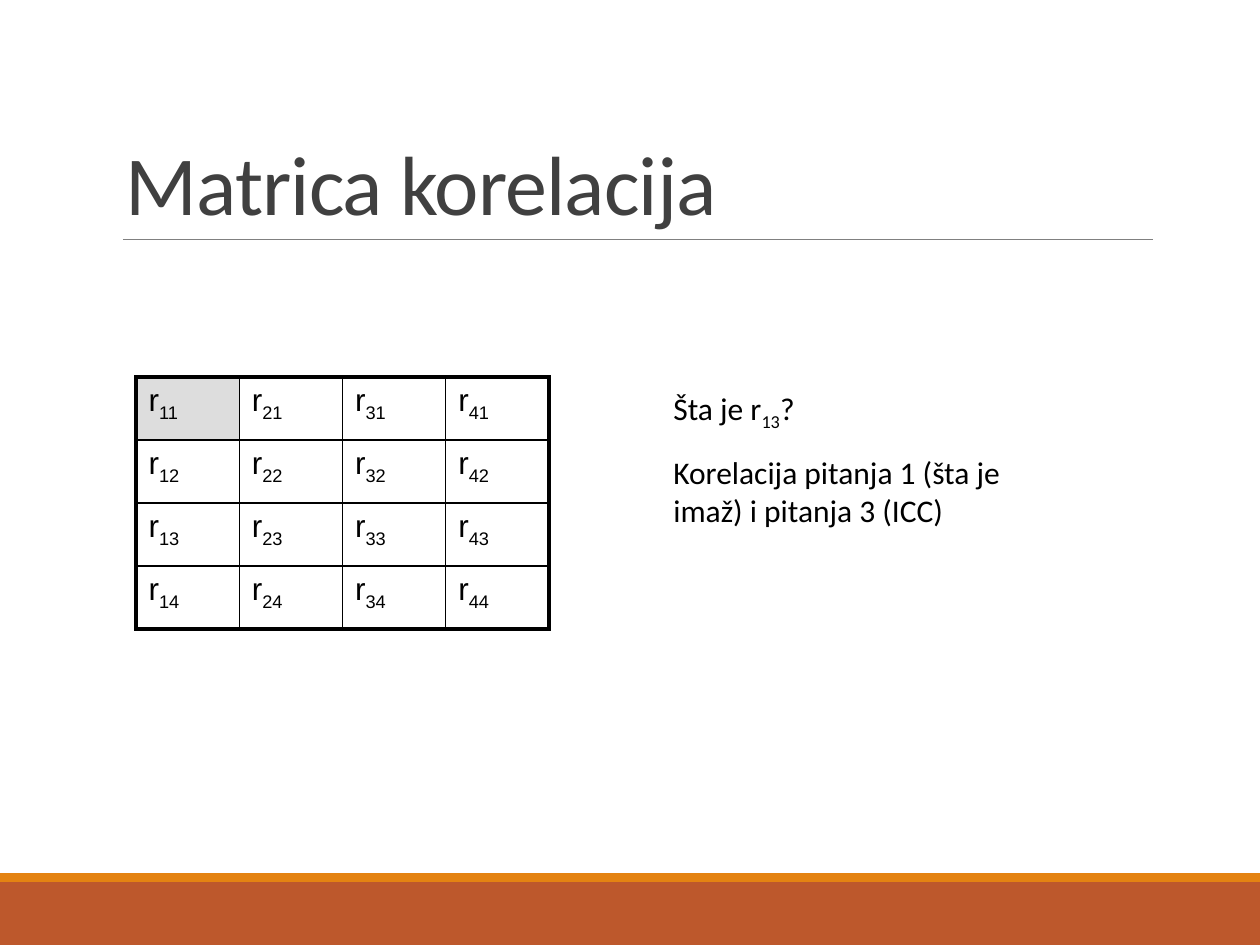
from lxml.etree import SubElement
from pptx import Presentation
from pptx.dml.color import RGBColor
from pptx.enum.shapes import MSO_CONNECTOR as CONNECTOR, MSO_SHAPE as SHAPE
from pptx.enum.text import MSO_ANCHOR as ANCHOR, MSO_AUTO_SIZE as AUTO_SIZE, PP_ALIGN as ALIGN
from pptx.oxml import parse_xml
from pptx.oxml.ns import nsdecls, qn
from pptx.util import Emu, Pt

PX = 914400 / 126
WIDTH, HEIGHT = 1260, 945

BLACK = RGBColor(0x00, 0x00, 0x00)
CHARCOAL = RGBColor(0x40, 0x40, 0x40)
GREY = RGBColor(0x80, 0x80, 0x80)
LIGHT_GREY = RGBColor(0xDD, 0xDD, 0xDD)
WHITE = RGBColor(0xFF, 0xFF, 0xFF)
RUST = RGBColor(0xBD, 0x58, 0x2C)
ORANGE = RGBColor(0xE4, 0x83, 0x12)

SIZE = 4
THIN, THICK = 1, 2.25


def px(*lengths):
    return [Emu(round(length * PX)) for length in lengths]


def add_subscripted(paragraph, pieces, font_name):
    """Write the pieces in turn as normal and subscript text."""
    for index, piece in enumerate(pieces):
        run = paragraph.add_run()
        run.text = piece
        if index % 2:
            run.font._element.set("baseline", "-25000")
    paragraph.font.name = font_name
    paragraph.font.size = Pt(18)
    paragraph.font.color.rgb = BLACK


def add_footer_bands(slide, left, top, width, height):
    stripe = 9
    for band_top, band_height, colour in ((top + stripe, height - stripe, RUST),
                                          (top, stripe, ORANGE)):
        band = slide.shapes.add_shape(SHAPE.RECTANGLE, *px(left, band_top, width, band_height))
        band.shadow.inherit = False
        band.fill.solid()
        band.fill.fore_color.rgb = colour
        band.line.fill.background()


def add_title(slide, left, top, width, height):
    """Fill the title placeholder and rule a line along its bottom edge."""
    bottom, right = top + height, left + width
    rule = slide.shapes.add_connector(CONNECTOR.STRAIGHT, *px(left + 10, bottom, right, bottom))
    rule.line.color.rgb = GREY
    rule.line.width = Pt(0.5)
    SubElement(rule._element.spPr, qn("a:effectLst"))

    title = slide.shapes.title
    title.left, title.top, title.width, title.height = px(left, top, width, height)
    frame = title.text_frame
    frame.text = "Matrica korelacija"
    frame.vertical_anchor = ANCHOR.BOTTOM
    frame.auto_size = AUTO_SIZE.NONE
    heading = frame.paragraphs[0]
    heading.alignment = ALIGN.LEFT
    heading.line_spacing = 0.85
    heading.font.name = "Calibri"
    heading.font.size = Pt(48)
    heading.font.color.rgb = CHARCOAL
    heading.runs[0].font._element.set("spc", "-50")


def set_borders(cell, row, column):
    """Draw thick borders on the outside of the matrix, thin ones inside."""
    outer_sides = {"L": column == 0, "R": column == SIZE - 1,
                   "T": row == 0, "B": row == SIZE - 1}
    properties = cell._tc.get_or_add_tcPr()
    for index, (side, is_outer) in enumerate(outer_sides.items()):
        width = Pt(THICK if is_outer else THIN)
        properties.insert(index, parse_xml(
            f'<a:ln{side} {nsdecls("a")} w="{width}"><a:solidFill>'
            f'<a:srgbClr val="{BLACK}"/></a:solidFill></a:ln{side}>'))


def add_correlation_matrix(slide, left, top, width, height):
    matrix = slide.shapes.add_table(SIZE, SIZE, *px(left, top, width, height)).table
    matrix.first_row = matrix.horz_banding = False
    for row in range(SIZE):
        for column in range(SIZE):
            cell = matrix.cell(row, column)
            cell.fill.solid()
            cell.fill.fore_color.rgb = LIGHT_GREY if row == column == 0 else WHITE
            set_borders(cell, row, column)
            subscript = f"{column + 1}{row + 1}"
            add_subscripted(cell.text_frame.paragraphs[0], ["r", subscript], "Arial")


def add_explanation(slide, left, top, width):
    question = (0, 50, ["Šta je r", "13", "?"])
    answer = (64, 89, ["Korelacija pitanja 1 (šta je imaž) i pitanja 3 (ICC)"])
    for offset, height, pieces in (question, answer):
        box = slide.shapes.add_textbox(*px(left, top + offset, width, height))
        frame = box.text_frame
        frame.word_wrap = True
        add_subscripted(frame.paragraphs[0], pieces, "Calibri")


def main():
    deck = Presentation()
    deck.slide_width, deck.slide_height = px(WIDTH, HEIGHT)
    slide = deck.slides.add_slide(deck.slide_layouts[5])
    add_footer_bands(slide, 0, 873, WIDTH, 72)
    add_title(slide, 113, 39, 1040, 200)
    add_correlation_matrix(slide, 136, 377, 413, 252)
    add_explanation(slide, 661, 383, 378)
    deck.save("out.pptx")


if __name__ == "__main__":
    main()
